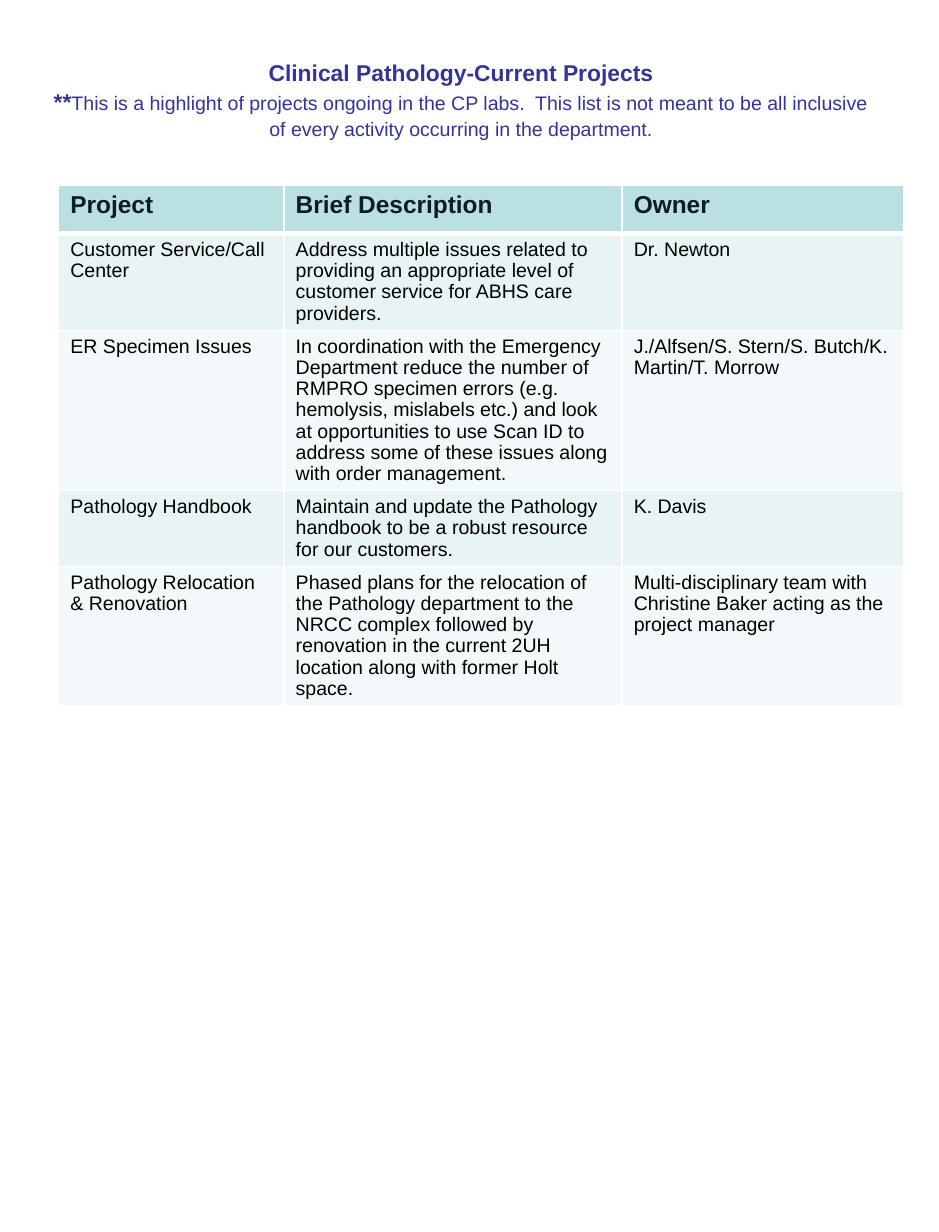
from dataclasses import dataclass

from pptx import Presentation
from pptx.dml.color import RGBColor as RGB
from pptx.enum.text import MSO_ANCHOR as Anchor, PP_ALIGN as Align
from pptx.oxml.ns import qn
from pptx.util import Pt
from lxml.etree import SubElement

PX = 9144


def px(n):
    return n * PX


@dataclass(frozen=True)
class Theme:
    font: str = "Arial"
    title: str = "333399"
    head_text: str = "0E1E20"
    body_text: str = "000000"
    head_fill: str = "BBE0E3"
    bands: tuple = ("E7F3F4", "F3F9FA")
    border: str = "FFFFFF"
    title_size: int = 14
    head_size: int = 15
    body_size: int = 12


def add_run(p, text, *, font, size, color, bold=False):
    r = p.add_run()
    r.text = text
    r.font.name = font
    r.font.size = Pt(size)
    r.font.bold = bold
    r.font.color.rgb = RGB.from_string(color)


class SlideBuilder:
    def __init__(self, slide, theme):
        self.slide = slide
        self.theme = theme

    def title(self, heading, mark, note, x, y, w, h):
        t = self.theme
        sp = self.slide.shapes.title
        sp.left, sp.top, sp.width, sp.height = map(px, (x, y, w, h))
        tf = sp.text_frame
        tf.word_wrap = True
        tf.vertical_anchor = Anchor.TOP
        tf.margin_left = tf.margin_right = px(11)
        tf.margin_top, tf.margin_bottom = px(31), px(5)
        p = tf.paragraphs[0]
        p.alignment = Align.CENTER
        p.line_spacing = 1.08
        style = dict(font=t.font, color=t.title)
        add_run(p, heading, size=t.title_size, bold=True, **style)
        p.add_line_break()
        add_run(p, mark, size=t.title_size, bold=True, **style)
        add_run(p, note, size=t.body_size, **style)

    def table(self, rows, x, y, widths, row_h):
        t = self.theme
        frame = self.slide.shapes.add_table(
            len(rows), len(widths), px(x), px(y), px(sum(widths)), px(row_h * len(rows)))
        table = frame.table
        for column, w in zip(table.columns, widths):
            column.width = px(w)
        for i, row in enumerate(rows):
            head = i == 0
            fill = t.head_fill if head else t.bands[(i - 1) % 2]
            for j, text in enumerate(row):
                cell = table.cell(i, j)
                p = cell.text_frame.paragraphs[0]
                p.line_spacing = 1.0 if head else 0.97
                add_run(p, text, font=t.font, bold=head,
                        size=t.head_size if head else t.body_size,
                        color=t.head_text if head else t.body_text)
                self.borders(cell, top=3 if i == 1 else 1, bottom=3 if head else 1)
                cell.fill.solid()
                cell.fill.fore_color.rgb = RGB.from_string(fill)

    def borders(self, cell, top, bottom):
        tc_pr = cell._tc.get_or_add_tcPr()
        for side, width in (("L", 1), ("R", 1), ("T", top), ("B", bottom)):
            ln = SubElement(tc_pr, qn(f"a:ln{side}"), w=str(Pt(width)))
            fill = SubElement(ln, qn("a:solidFill"))
            SubElement(fill, qn("a:srgbClr"), val=self.theme.border)


PROJECTS = [
    ("Project", "Brief Description", "Owner"),
    ("Customer Service/Call Center",
     "Address multiple issues related to providing an appropriate level of "
     "customer service for ABHS care providers.",
     "Dr. Newton"),
    ("ER Specimen Issues",
     "In coordination with the Emergency Department reduce the number of "
     "RMPRO specimen errors (e.g. hemolysis, mislabels etc.) and look at "
     "opportunities to use Scan ID to address some of these issues along "
     "with order management.",
     "J./Alfsen/S. Stern/S. Butch/K. Martin/T. Morrow"),
    ("Pathology Handbook",
     "Maintain and update the Pathology handbook to be a robust resource "
     "for our customers.",
     "K. Davis"),
    ("Pathology Relocation & Renovation",
     "Phased plans for the relocation of the Pathology department to the "
     "NRCC complex followed by renovation in the current 2UH location along "
     "with former Holt space.",
     "Multi-disciplinary team with Christine Baker acting as the project manager"),
]


def main():
    prs = Presentation()
    prs.slide_width, prs.slide_height = px(800), px(1050)
    slide = prs.slides.add_slide(prs.slide_layouts[5])
    builder = SlideBuilder(slide, Theme())
    builder.table(PROJECTS, 50, 158, (192, 288, 240), 41)
    builder.title(
        "Clinical Pathology-Current Projects", "**",
        "This is a highlight of projects ongoing in the CP labs.  This list is "
        "not meant to be all inclusive of every activity occurring in the department.",
        33, 17, 720, 100)
    prs.save("out.pptx")


if __name__ == "__main__":
    main()
